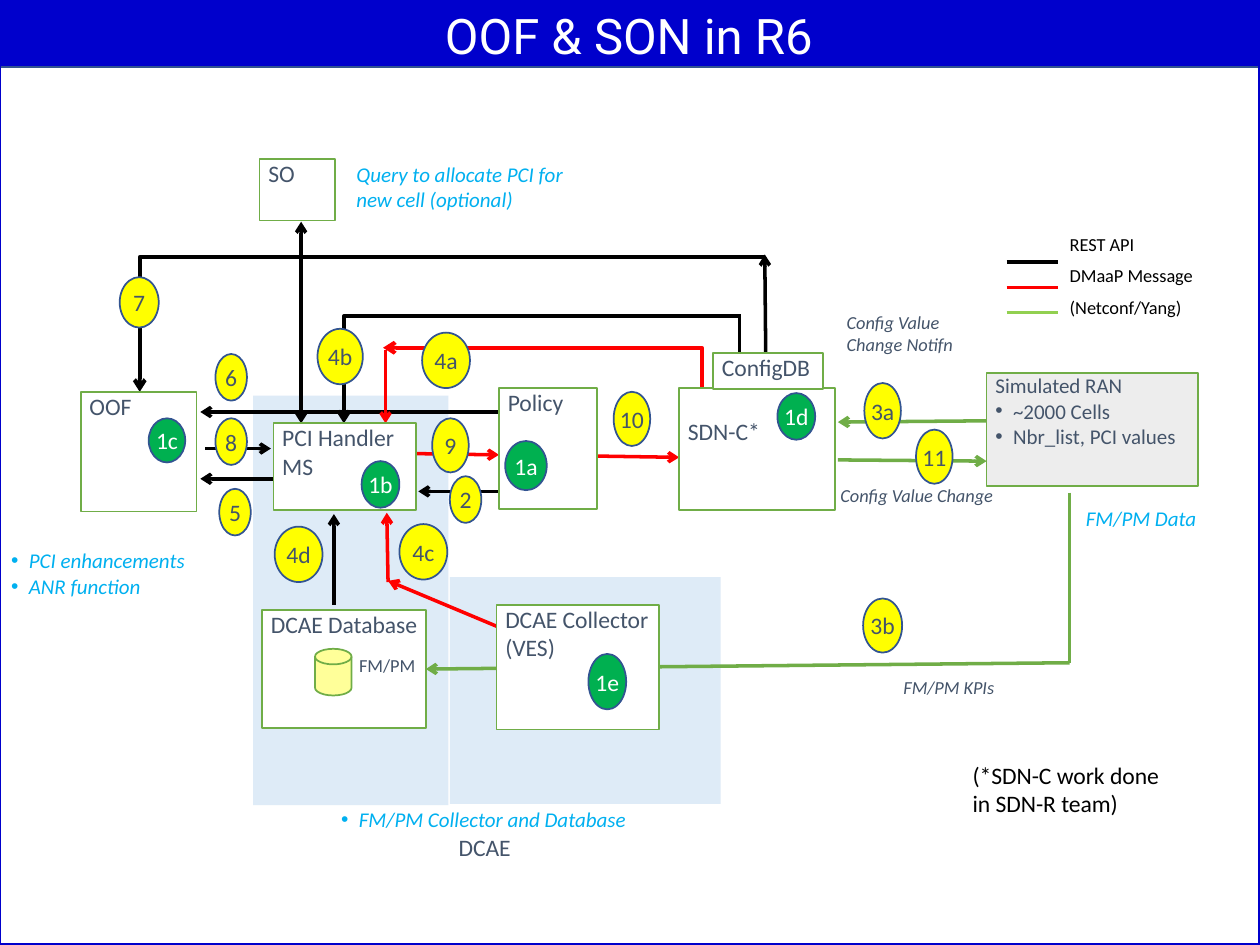
from lxml.etree import SubElement
from pptx import Presentation
from pptx.dml.color import RGBColor
from pptx.enum.shapes import MSO_CONNECTOR, MSO_SHAPE
from pptx.enum.text import MSO_ANCHOR, PP_ALIGN
from pptx.oxml.ns import qn
from pptx.util import Inches, Pt

COLORS = {
    "blue": "0000CC", "outline": "325491", "white": "FFFFFF", "black": "000000",
    "panel": "DEEBF7", "gray": "EDEDED", "slate": "44546A", "sky": "00B0F0",
    "green": "70AD47", "lime": "92D050", "red": "FF0000",
    "yellow": "FFFF00", "badge": "00B050", "disk": "FFFF99",
}

prs = Presentation()
prs.slide_width, prs.slide_height = Inches(10), Inches(7.5)
slide = prs.slides.add_slide(prs.slide_layouts[6])


def rgb(name):
    return RGBColor.from_string(COLORS[name])


def add_block(at, text="", kind=None, fill=None, line=None, width=1, size=13.5,
              color="slate", font="Calibri", italic=False, center=False,
              bullets_from=None, inset=(0, 0)):
    """Add a preset shape, or a text box if kind is None, with formatted text."""
    box = [Inches(v) for v in at]
    if kind is None:
        block = slide.shapes.add_textbox(*box)
    else:
        block = slide.shapes.add_shape(kind, *box)
        block.shadow.inherit = False
        if fill:
            block.fill.solid()
            block.fill.fore_color.rgb = rgb(fill)
        else:
            block.fill.background()
        if line:
            block.line.color.rgb = rgb(line)
            block.line.width = Pt(width)
        else:
            block.line.fill.background()
    if not text:
        return
    frame = block.text_frame
    frame.word_wrap = True
    frame.margin_left, frame.margin_top = Inches(inset[0]), Inches(inset[1])
    frame.margin_right = frame.margin_bottom = 0
    frame.vertical_anchor = MSO_ANCHOR.MIDDLE if center else MSO_ANCHOR.TOP
    for i, words in enumerate(text.split("\n")):
        para = frame.paragraphs[0] if i == 0 else frame.add_paragraph()
        para.alignment = PP_ALIGN.CENTER if center else PP_ALIGN.LEFT
        run = para.add_run()
        run.text = words
        run.font.name, run.font.size = font, Pt(size)
        run.font.italic = italic
        run.font.color.rgb = rgb(color)
        if bullets_from is not None and i >= bullets_from:
            props = para._p.get_or_add_pPr()
            props.set("marL", str(Inches(0.14)))
            props.set("indent", str(-Inches(0.14)))
            SubElement(props, qn("a:buFont")).set("typeface", "Arial")
            SubElement(props, qn("a:buChar")).set("char", "•")


# Header and slide frame
RECT, OVAL = MSO_SHAPE.RECTANGLE, MSO_SHAPE.OVAL
add_block((0, 0.01, 10, 0.52), kind=RECT, fill="blue", line="outline")
add_block((2.67, -0.01, 4.64, 0.57), "OOF & SON in R6", size=28, color="white",
          font="Roboto", center=True)
add_block((-0.01, 0.01, 10.01, 7.49), kind=RECT, line="blue", width=2.25)

# DCAE background, an L made of two panels
for panel in [(3.57, 4.58, 2.15, 1.8), (2.01, 3.14, 1.55, 3.25)]:
    add_block(panel, kind=RECT, fill="panel")

# Flows: from, to, colour, arrowed ends, bent
flows = [
    ((4.74, 3.62), (5.39, 3.63), "red", "tail", False),
    ((3.96, 3.9), (3.32, 3.9), "black", "tail", False),
    ((3.3, 3.6), (3.96, 3.61), "red", "tail", False),
    ((1.63, 3.56), (2.15, 3.56), "black", "tail", False),
    ((2.17, 3.8), (1.59, 3.8), "black", "tail", False),
    ((3.96, 3.27), (1.59, 3.27), "black", "tail", False),
    ((5.87, 3.06), (5.87, 2.49), "black", "", False),
    ((6.08, 3.08), (6.07, 2.02), "black", "tail", False),
    ((5.86, 2.51), (2.73, 3.36), "black", "tail", True),
    ((6.07, 2.04), (1.11, 3.11), "black", "tail", True),
    ((3.04, 2.76), (5.57, 3.07), "red", "head", True),
    ((3.06, 2.78), (3.06, 3.36), "red", "tail", False),
    ((3.08, 4.62), (3.07, 4.07), "red", "tail", False),
    ((3.94, 4.97), (3.08, 4.61), "red", "tail", False),
    ((2.65, 4.8), (2.65, 4.08), "black", "tail", False),
    ((2.39, 1.76), (2.39, 3.36), "black", "head tail", False),
    ((7.83, 3.34), (6.65, 3.35), "green", "tail", False),
    ((6.65, 3.65), (7.83, 3.66), "green", "tail", False),
    ((8.49, 3.91), (8.49, 5.26), "green", "", False),
    ((8.49, 5.26), (3.38, 5.31), "green", "tail", False),
]

# Legend, whose lines join the flows
legend = [("REST API", "black"), ("DMaaP Message", "red"), ("(Netconf/Yang)", "lime")]
for row, (meaning, color) in enumerate(legend):
    y = 2.08 + 0.2 * row
    flows.append(((7.99, y), (8.4, y), color, "", False))
    add_block((8.49, 1.85 + 0.25 * row, 1.2, 0.33), meaning, size=10.5, color="black")

for start, end, color, ends, bent in flows:
    style = MSO_CONNECTOR.ELBOW if bent else MSO_CONNECTOR.STRAIGHT
    flow = slide.shapes.add_connector(style, *[Inches(v) for v in start + end])
    flow.line.color.rgb = rgb(color)
    flow.line.width = Pt(2.25 if bent else 2)
    props = flow._element.spPr
    if bent:  # a single corner: across, then down
        props.find(qn("a:prstGeom")).set("prst", "bentConnector2")
    for side in ends.split():
        SubElement(flow.line._get_or_add_ln(), qn(f"a:{side}End")).set("type", "arrow")
    SubElement(props, qn("a:effectLst"))

# Components
components = [
    ("SO", (2.06, 1.26, 0.6, 0.49)),
    ("OOF", (0.64, 3.11, 0.92, 0.95)),
    ("PCI Handler MS", (2.17, 3.36, 1.13, 0.69)),
    ("Policy", (3.96, 3.08, 0.78, 0.96)),
    ("SDN-C*", (5.39, 3.08, 1.24, 0.97)),
    ("ConfigDB", (5.66, 2.8, 0.87, 0.29)),
    ("DCAE Collector\n(VES)", (3.94, 4.8, 1.29, 0.99)),
    ("DCAE Database", (2.08, 4.84, 1.3, 0.94)),
]
for name, at in components:
    top = 0.23 if name == "SDN-C*" else 0  # keeps clear of ConfigDB
    add_block(at, name, kind=RECT, fill="white", line="green", inset=(0.07, top))
add_block((7.83, 2.96, 1.68, 0.9),
          "Simulated RAN\n~2000 Cells\nNbr_list, PCI values", kind=RECT,
          fill="gray", line="green", size=12, bullets_from=1, inset=(0.07, 0))
add_block((2.5, 5.15, 0.29, 0.37), kind=MSO_SHAPE.FLOWCHART_MAGNETIC_DISK,
          fill="disk", line="green")

# Step numbers on the flows
steps = {
    "2": (3.57, 3.78, 0.25, 0.37), "5": (1.74, 3.88, 0.25, 0.37),
    "6": (1.71, 2.81, 0.25, 0.37), "8": (1.71, 3.32, 0.25, 0.37),
    "9": (3.43, 3.32, 0.29, 0.43), "10": (4.87, 3.11, 0.29, 0.43),
    "11": (7.27, 3.41, 0.29, 0.43), "7": (0.95, 2.2, 0.31, 0.4),
    "3a": (6.86, 3.04, 0.29, 0.44), "3b": (6.85, 4.75, 0.31, 0.43),
    "4a": (3.35, 2.64, 0.38, 0.44), "4b": (2.52, 2.61, 0.36, 0.44),
    "4c": (3.17, 4.16, 0.38, 0.44), "4d": (2.18, 4.18, 0.38, 0.44),
}
for number, at in steps.items():
    add_block(at, number, kind=OVAL, fill="yellow", line="outline", center=True)

# Step numbers inside the components
inner_steps = {
    "1a": (4.01, 3.5, 0.33, 0.39), "1b": (2.87, 3.66, 0.3, 0.37),
    "1c": (1.18, 3.32, 0.29, 0.35), "1d": (6.17, 3.12, 0.3, 0.37),
    "1e": (4.67, 5.19, 0.3, 0.44),
}
for number, at in inner_steps.items():
    add_block(at, number, kind=OVAL, fill="badge", line="outline", color="white",
              center=True)

# Flow labels
flow_labels = [
    ("Config Value\nChange Notifn", (6.72, 2.47, 0.95, 0.44)),
    ("Config Value Change", (6.67, 3.84, 1.31, 0.34)),
    ("FM/PM KPIs", (7.17, 5.37, 0.78, 0.37)),
]
for label, at in flow_labels:
    add_block(at, label, size=10.5, italic=True)
add_block((2.85, 5.19, 0.49, 0.32), "FM/PM", size=10.5)
add_block((3.57, 6.61, 0.8, 0.25), "DCAE", inset=(0.07, 0))

# Comments on the new work
comments = [
    ("PCI enhancements\nANR function", (-0.01, 4.3, 1.75, 0.72), 0),
    ("FM/PM Collector and Database", (2.61, 6.35, 2.66, 0.43), 0),
    ("FM/PM Data", (8.52, 3.96, 1.3, 0.43), None),
    ("Query to allocate PCI for new cell (optional)", (2.73, 1.23, 2, 0.72), None),
]
for comment, at, bullets_from in comments:
    add_block(at, comment, size=12, color="sky", italic=True,
              bullets_from=bullets_from, inset=(0.1, 0.05))
add_block((7.62, 5.99, 1.82, 0.8), "(*SDN-C work done\nin SDN-R team)",
          color="black", inset=(0.1, 0.05))

prs.save("out.pptx")
